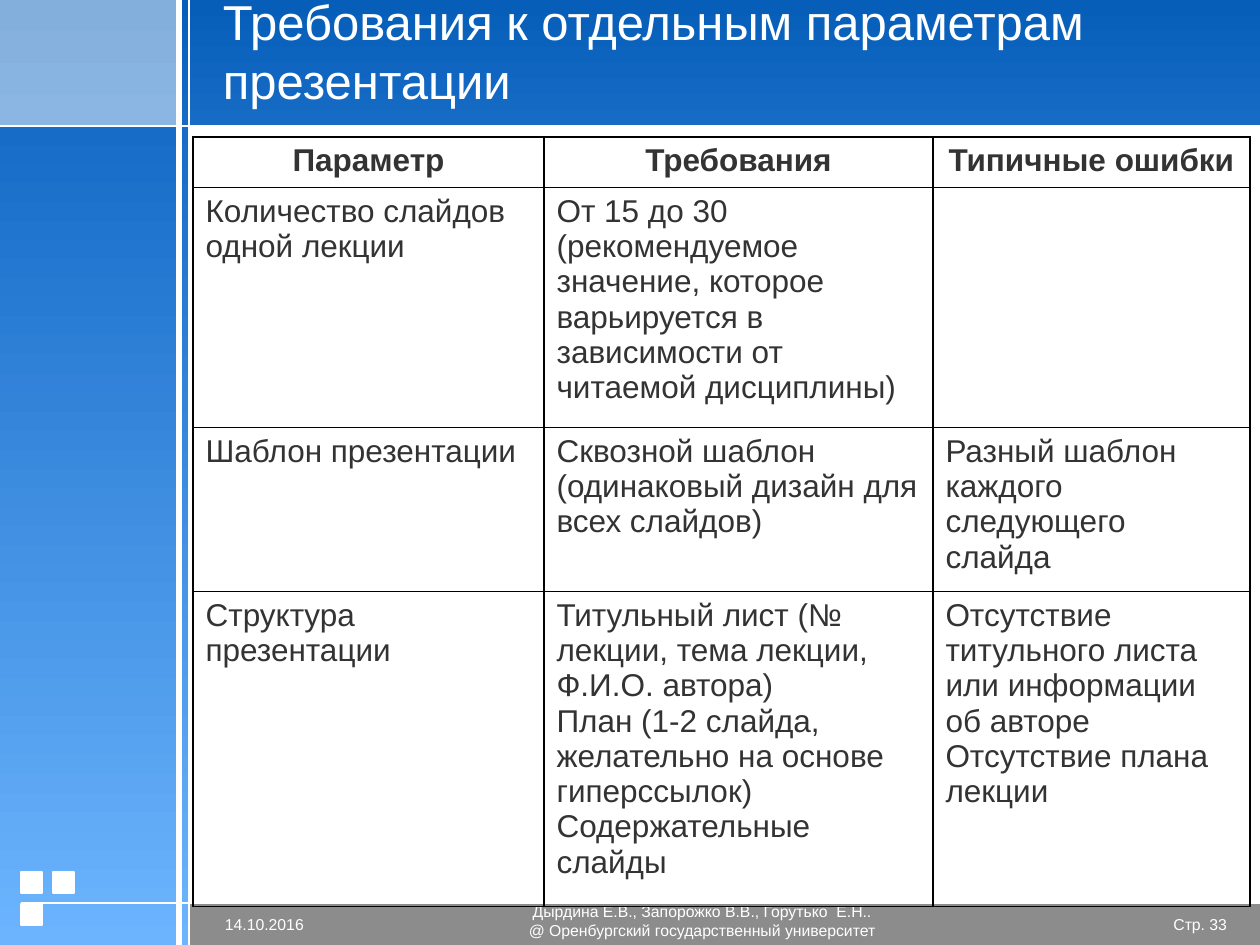
from lxml.etree import SubElement
from pptx import Presentation
from pptx.dml.color import RGBColor
from pptx.enum.shapes import MSO_CONNECTOR as Connector, MSO_SHAPE as Shape
from pptx.enum.text import MSO_ANCHOR as Anchor, PP_ALIGN as Align
from pptx.oxml.ns import qn
from pptx.util import Pt

EMU_PER_PX = 914400 / 126
WIDTH, HEIGHT = 1260, 945
WHITE, BLACK, INK = "FFFFFF", "000000", "333333"
HEADINGS = ["Параметр", "Требования", "Типичные ошибки"]
REQUIREMENTS = [
    [["Количество слайдов одной лекции"],
     ["От 15 до 30 (рекомендуемое значение, которое варьируется в зависимости от читаемой дисциплины)"],
     []],
    [["Шаблон презентации"],
     ["Сквозной шаблон (одинаковый дизайн для всех слайдов)"],
     ["Разный шаблон каждого следующего слайда"]],
    [["Структура", "презентации"],
     ["Титульный лист (№ лекции, тема лекции, Ф.И.О. автора)",
      "План (1-2 слайда, желательно на основе гиперссылок)",
      "Содержательные слайды"],
     ["Отсутствие титульного листа или информации об авторе",
      "Отсутствие плана лекции"]],
]


def px(*lengths):
    """Turn pixel lengths into a list of EMU."""
    return [round(length * EMU_PER_PX) for length in lengths]


def paint(color_format, color):
    """Set a colour from a hex string."""
    color_format.rgb = RGBColor.from_string(color)


def add_panel(slide, box, *colors, line=None):
    """Add a rectangle with a plain fill or a downward gradient."""
    panel = slide.shapes.add_shape(Shape.RECTANGLE, *px(*box))
    panel.shadow.inherit = False
    if len(colors) == 1:
        panel.fill.solid()
        paint(panel.fill.fore_color, colors[0])
    else:
        panel.fill.gradient()
        panel.fill.gradient_angle = 270
        for stop, color in zip(panel.fill.gradient_stops, colors):
            paint(stop.color, color)
    if line:
        paint(panel.line.color, line)
        panel.line.width = Pt(0.75)
    else:
        panel.line.fill.background()


def add_rule(slide, ends, points=1):
    """Add a straight white line."""
    rule = slide.shapes.add_connector(Connector.STRAIGHT, *px(*ends))
    paint(rule.line.color, WHITE)
    rule.line.width = Pt(points)
    SubElement(rule._element.spPr, qn("a:effectLst"))


def write(frame, lines, size, color, align=Align.LEFT, bold=False):
    """Fill a text frame with one paragraph per line."""
    frame.word_wrap = True
    for index, line in enumerate(lines):
        paragraph = frame.add_paragraph() if index else frame.paragraphs[0]
        paragraph.text = line
        paragraph.alignment = align
        font = paragraph.font
        font.name, font.size, font.bold = "Arial", Pt(size), bold
        paint(font.color, color)


def add_text(slide, box, lines, size, align=Align.LEFT, anchor=Anchor.MIDDLE, insets=(0, 0)):
    """Add a white text box with the given side and top insets."""
    frame = slide.shapes.add_textbox(*px(*box)).text_frame
    frame.margin_left, frame.margin_top = px(*insets)
    frame.margin_right, frame.margin_bottom = px(*insets)
    frame.vertical_anchor = anchor
    write(frame, lines, size, WHITE, align)


def draw_backdrop(slide, box):
    """Draw the header, side band, footer strip, squares and rules."""
    left, top, width, height = box
    right, bottom = left + width, top + height
    band, header, footer = left + 189, top + 126, bottom - 42
    edge = left + 179
    add_panel(slide, (band, header, right - band, footer - header), WHITE)
    add_panel(slide, (band, footer, right - band, 42), "8C8C8C")
    add_panel(slide, (left, top, 189, 126), "83AFDC", "8BB6E3")
    add_panel(slide, (left, header, 189, bottom - header), "166CC7", "6CB4FE")
    add_panel(slide, (edge, top, right - edge, 126), "065EB8", "166BC5")
    for column, row in [(0, 1), (0, 0), (1, 0)]:
        square = (left + 21 + 32 * column, footer - 31 + 32 * row, 21, 21)
        add_panel(slide, square, WHITE, line=WHITE)
    add_rule(slide, (band, top, band, bottom))
    add_rule(slide, (edge, top, edge, bottom), 3)
    add_rule(slide, (right, header, left, header))
    add_rule(slide, (right, footer, left + 21, footer))


def draw_footer(slide, box):
    """Place the date, authors and page number in the footer strip."""
    left, top, width, height = box
    add_text(slide, (left + width - 105, top + 10, 72, 22), ["Стр. 33"], 9, Align.RIGHT)
    add_text(slide, (left + 36, top + 10, 152, 22), ["14.10.2016"], 9)
    authors = ["Дырдина Е.В., Запорожко В.В., Горутько  Е.Н..",
               "@ Оренбургский государственный университет"]
    add_text(slide, (left + 154, top - 21, 718, 77), authors, 9, Align.CENTER)


def draw_title(slide, box):
    """Place the slide title at the bottom of its box."""
    title = ["Требования к отдельным параметрам презентации"]
    add_text(slide, box, title, 28, anchor=Anchor.BOTTOM, insets=(13, 6))


def style_cell(cell):
    """Give a cell black borders and no fill."""
    properties = cell._tc.get_or_add_tcPr()
    for side in ("a:lnL", "a:lnR", "a:lnT", "a:lnB"):
        border = SubElement(properties, qn(side), w=str(Pt(1)))
        fill = SubElement(border, qn("a:solidFill"))
        SubElement(fill, qn("a:srgbClr"), val=BLACK)
    cell.fill.background()


def draw_requirements(slide, box):
    """Draw the table of parameters, requirements and typical mistakes."""
    rows = [[[heading] for heading in HEADINGS]] + REQUIREMENTS
    table = slide.shapes.add_table(len(rows), len(HEADINGS), *px(*box)).table
    table.first_row = table.horz_banding = False
    for column, width in zip(table.columns, px(351, 389, 317)):
        column.width = width
    for row, height in zip(table.rows, px(50, 240, 164, 315)):
        row.height = height
    for row_index, row in enumerate(rows):
        heading = row_index == 0
        for column_index, lines in enumerate(row):
            cell = table.cell(row_index, column_index)
            style_cell(cell)
            align = Align.CENTER if heading else Align.LEFT
            write(cell.text_frame, lines, 18, INK, align, heading)


def main():
    """Build and save the slide."""
    deck = Presentation()
    deck.slide_width, deck.slide_height = px(WIDTH, HEIGHT)
    slide = deck.slides.add_slide(deck.slide_layouts[6])
    slide.background.fill.solid()
    paint(slide.background.fill.fore_color, "BDE0FF")
    draw_backdrop(slide, (0, 0, WIDTH, HEIGHT))
    draw_footer(slide, (189, 903, 1071, 42))
    draw_title(slide, (210, 10, 1029, 105))
    draw_requirements(slide, (193, 137, 1057, 769))
    deck.save("out.pptx")


if __name__ == "__main__":
    main()
